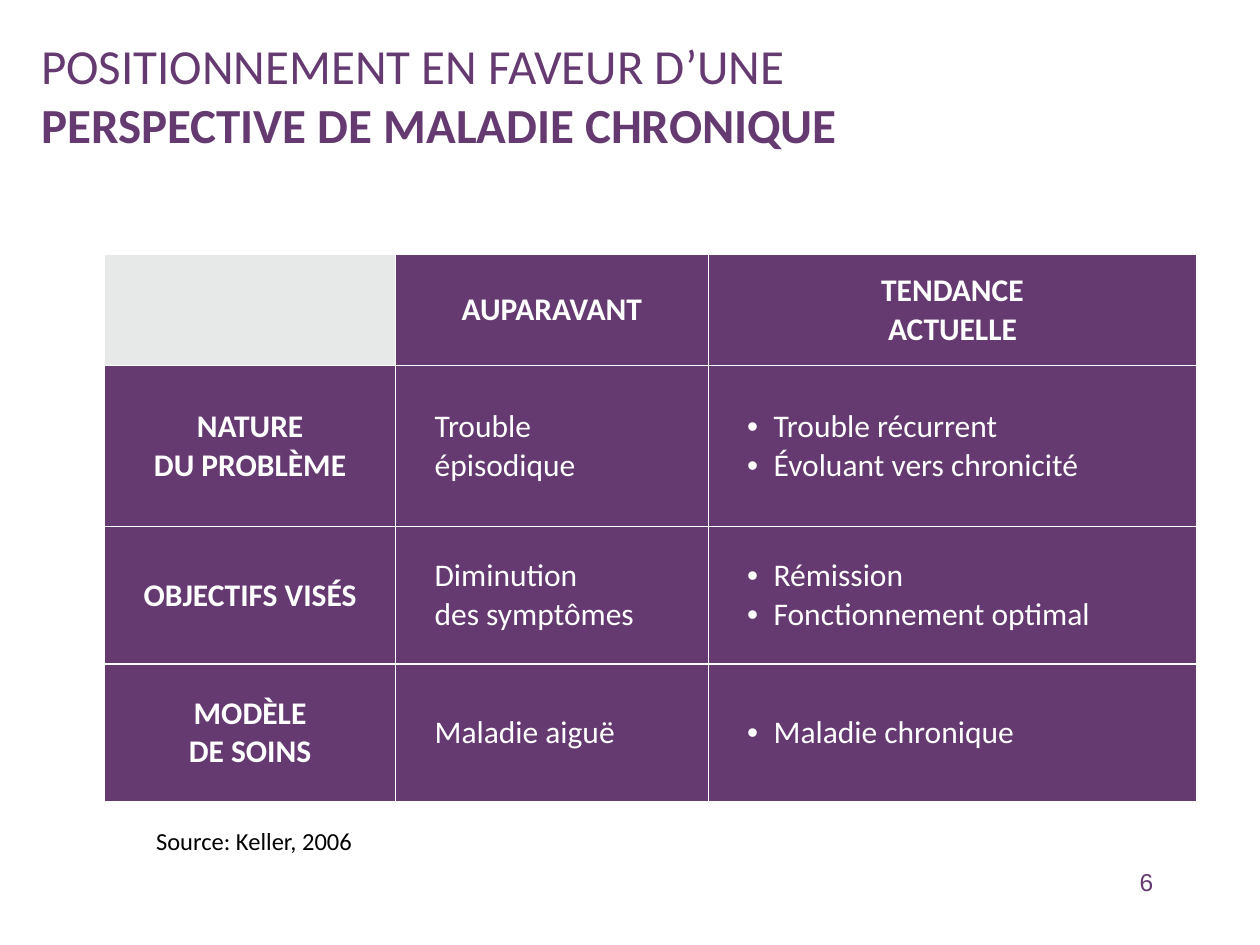
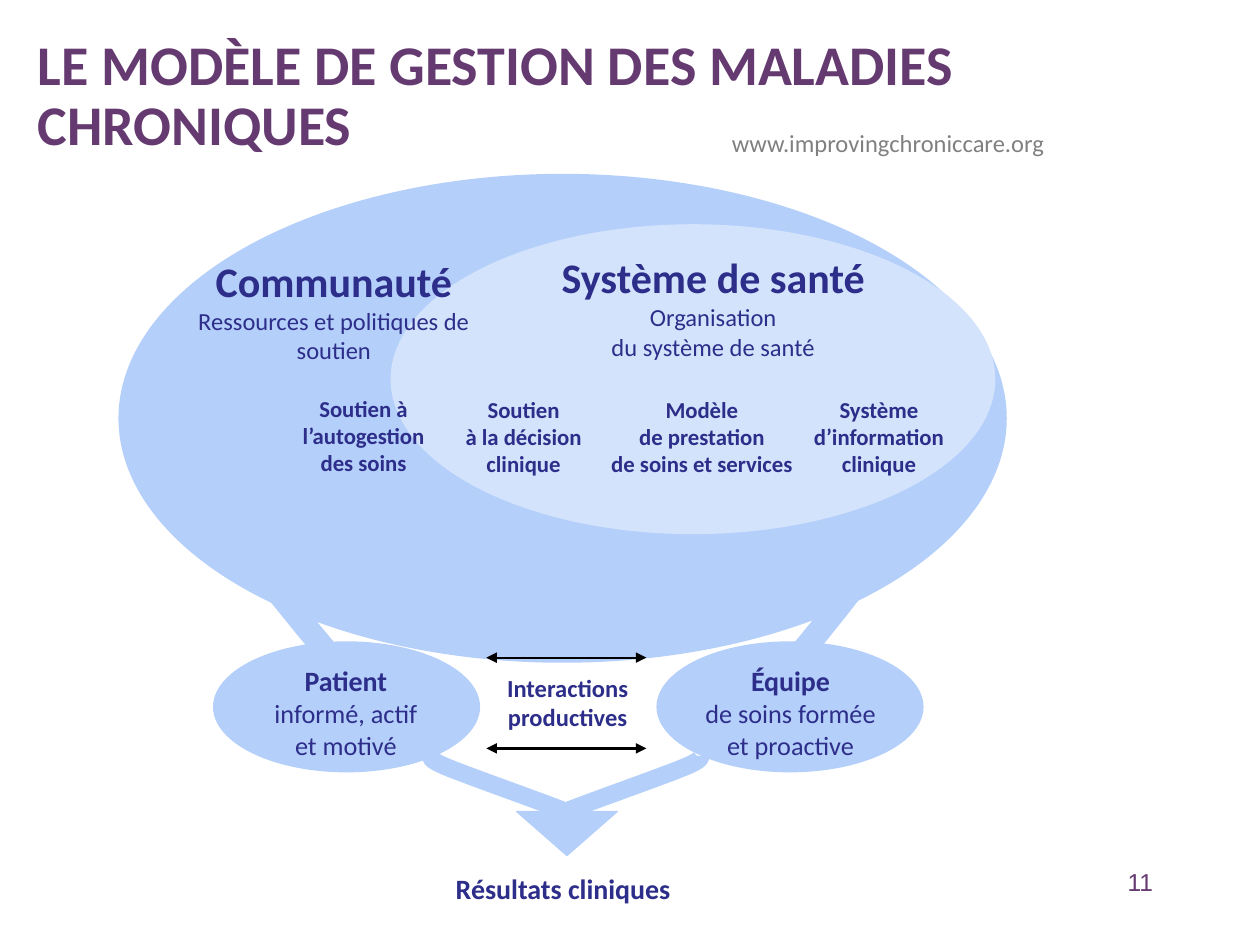
import lxml.etree
import pptx
import pptx.dml.color
import pptx.enum.shapes
import pptx.enum.text
import pptx.oxml.ns
import pptx.util

EMU_PER_PX = 9144  # 100 px to the inch
COLOURS = {
    "purple": "653A71",
    "grey": "E7E8E8",
    "white": "FFFFFF",
    "black": "000000",
    "link": "808080",
    "navy": "2D2D8A",
    "sky": "B4CFFA",
    "pale": "D4E3FC",
}
ALIGN = pptx.enum.text.PP_ALIGN
MIDDLE = pptx.enum.text.MSO_ANCHOR.MIDDLE
SHAPES = pptx.enum.shapes.MSO_SHAPE


def px(length):
    return pptx.util.Emu(round(length * EMU_PER_PX))


def rgb(name):
    return pptx.dml.color.RGBColor.from_string(COLOURS[name])


def add_element(parent, tag, **attributes):
    return lxml.etree.SubElement(parent, pptx.oxml.ns.qn(tag), attributes)


def bezier(points, steps=12):
    """Points along a chain of cubic curves: a start, then three points per curve."""
    curve = [points[0]]
    for first in range(0, len(points) - 1, 3):
        corners = points[first:first + 4]
        for step in range(1, steps + 1):
            t = step / steps
            weights = ((1 - t) ** 3, 3 * t * (1 - t) ** 2, 3 * t * t * (1 - t), t ** 3)
            curve.append(tuple(sum(weight * corner[axis] for weight, corner in zip(weights, corners))
                               for axis in (0, 1)))
    return curve


def mirror(points, x_sum, drop=0):
    """Reflect points about the vertical line x = x_sum / 2, then lower them."""
    return [(x_sum - x, y + drop) for x, y in points]


class Deck:
    def __init__(self):
        self.presentation = pptx.Presentation()
        self.presentation.slide_width = px(1000)
        self.presentation.slide_height = px(750)
        self.slide = None

    def new_slide(self, number):
        self.slide = self.presentation.slides.add_slide(self.presentation.slide_layouts[6])
        self.text((717, 683, 208, 50), [[(number, 14, False)]], "purple", ALIGN.RIGHT, font="Arial")

    def add_runs(self, paragraph, runs, colour, align, font="Calibri"):
        """Fill a paragraph with (text, size, bold) runs; a newline is a line break."""
        paragraph.alignment = align
        for text, size, bold in runs:
            for index, part in enumerate(text.split("\n")):
                if index:
                    paragraph.add_line_break()
                run = paragraph.add_run()
                run.text = part
                run.font.name = font
                run.font.size = pptx.util.Pt(size)
                run.font.bold = bold
                run.font.color.rgb = rgb(colour)

    def text(self, box, paragraphs, colour="navy", align=ALIGN.CENTER, font="Calibri"):
        frame = self.slide.shapes.add_textbox(*map(px, box)).text_frame
        frame.word_wrap = True
        for index, runs in enumerate(paragraphs):
            paragraph = frame.add_paragraph() if index else frame.paragraphs[0]
            self.add_runs(paragraph, runs, colour, align, font)
        return frame

    def title(self, box, runs, line_spacing=1.0):
        frame = self.text(box, [runs], "purple", ALIGN.LEFT)
        frame.vertical_anchor = MIDDLE
        frame.paragraphs[0].line_spacing = line_spacing

    def shape(self, kind, box, fill, line_width=0):
        shape = self.slide.shapes.add_shape(kind, *map(px, box))
        self.paint(shape, fill, line_width)

    def paint(self, shape, fill, line_width, line_colour="sky"):
        shape.shadow.inherit = False
        if fill:
            shape.fill.solid()
            shape.fill.fore_color.rgb = rgb(fill)
        else:
            shape.fill.background()
        if line_width:
            shape.line.color.rgb = rgb(line_colour)
            shape.line.width = pptx.util.Pt(line_width)
        else:
            shape.line.fill.background()

    def curve(self, points, width, fill=None):
        start, *rest = [(px(x), px(y)) for x, y in bezier(points)]
        builder = self.slide.shapes.build_freeform(*start, scale=1.0)
        builder.add_line_segments(rest, close=False)
        self.paint(builder.convert_to_shape(), fill, width)

    def double_arrow(self, left, right, y):
        connector = self.slide.shapes.add_connector(
            pptx.enum.shapes.MSO_CONNECTOR.STRAIGHT, px(left), px(y), px(right), px(y))
        connector.line.color.rgb = rgb("black")
        connector.line.width = pptx.util.Pt(1.25)
        properties = connector._element.spPr
        line = properties.find(pptx.oxml.ns.qn("a:ln"))
        for tag in ("a:headEnd", "a:tailEnd"):
            add_element(line, tag, type="triangle")
        add_element(properties, "a:effectLst")

    def table(self, left, top, widths, heights):
        table = self.slide.shapes.add_table(
            len(heights), len(widths), *map(px, (left, top, sum(widths), sum(heights)))).table
        table.first_row = table.horz_banding = False
        for column, width in zip(table.columns, widths):
            column.width = px(width)
        for row, height in zip(table.rows, heights):
            row.height = px(height)
        return table

    def cell(self, cell, lines, fill, bold, align, indent=0, bullet=False):
        cell.vertical_anchor = MIDDLE
        properties = cell._tc.get_or_add_tcPr()
        for side in "LRTB":
            border = add_element(properties, f"a:ln{side}", w=str(pptx.util.Pt(0.75)))
            solid = add_element(border, "a:solidFill")
            add_element(solid, "a:srgbClr", val=COLOURS["white"])
        cell.fill.solid()
        cell.fill.fore_color.rgb = rgb(fill)
        for index, line in enumerate(lines):
            paragraph = cell.text_frame.add_paragraph() if index else cell.text_frame.paragraphs[0]
            paragraph_properties = paragraph._p.get_or_add_pPr()
            paragraph_properties.set("marL", str(px(indent * (1 + bullet))))
            if bullet:
                paragraph_properties.set("indent", str(px(-indent)))
                add_element(paragraph_properties, "a:buFont", typeface="Arial")
                add_element(paragraph_properties, "a:buChar", char="•")
            self.add_runs(paragraph, [(line, 18, bold)], "white", align)


def perspective_slide(deck):
    deck.new_slide("6")
    deck.title((23, 0, 693, 150), [("POSITIONNEMENT EN FAVEUR D’UNE ", 28, False),
                                   ("PERSPECTIVE DE MALADIE CHRONIQUE", 28, True)])
    rows = [
        ([], ["AUPARAVANT"], ["TENDANCE", "ACTUELLE"]),
        (["NATURE\nDU PROBLÈME"], ["Trouble", "épisodique"],
         ["Trouble récurrent", "Évoluant vers chronicité"]),
        (["OBJECTIFS VISÉS"], ["Diminution\ndes symptômes"],
         ["Rémission", "Fonctionnement optimal"]),
        (["MODÈLE\nDE SOINS"], ["Maladie aiguë"], ["Maladie chronique"]),
    ]
    table = deck.table(83, 202, (231, 248, 388), (88, 128, 109, 109))
    for row_index, row in enumerate(rows):
        for column_index, lines in enumerate(row):
            cell = table.cell(row_index, column_index)
            fill = "purple" if lines else "grey"
            if row_index == 0 or column_index == 0:
                deck.cell(cell, lines, fill, True, ALIGN.CENTER)
            else:
                deck.cell(cell, lines, fill, False, ALIGN.LEFT, 21, column_index == 2)
    deck.text((114, 651, 281, 34), [[("Source: Keller, 2006", 14, False)]], "black", ALIGN.LEFT)


def model_slide(deck):
    deck.new_slide("11")
    deck.shape(SHAPES.OVAL, (94, 138, 705, 388), "sky")
    deck.shape(SHAPES.OVAL, (310, 178, 480, 246), "pale")

    leg = [(259, 517), (238, 492), (217, 466), (203, 447), (189, 428), (179, 408), (174, 400)]
    for points in (leg, mirror(leg, 885, 13)):
        deck.curve(points, 13.5, "sky")
    for left in (169, 521):
        deck.shape(SHAPES.OVAL, (left, 509, 212, 104), "sky")

    headed_texts = [
        ((414, 195, 304, 104), 24, 14, ("Système de santé", "Organisation", "du système de santé")),
        ((138, 198, 254, 104), 24, 14, ("Communauté", "Ressources et politiques de soutien")),
        ((197, 522, 155, 78), 16, 15, ("Patient", "informé, actif", "et motivé")),
        ((536, 522, 183, 78), 16, 15, ("Équipe", "de soins formée", "et proactive")),
    ]
    for box, heading_size, size, (heading, *lines) in headed_texts:
        deck.text(box, [[(heading, heading_size, True)]] + [[(line, size, False)] for line in lines])

    bold_texts = [
        ((225, 308, 127, 91), 13, ("Soutien à l’autogestion", "des soins")),
        ((352, 309, 127, 76), 13, ("Soutien", "à la décision clinique")),
        ((465, 309, 184, 76), 13, ("Modèle", "de prestation", "de soins et services")),
        ((620, 309, 155, 76), 13, ("Système d’information clinique",)),
        ((366, 529, 169, 65), 14, ("Interactions productives",)),
        ((327, 687, 240, 39), 16, ("Résultats cliniques",)),
    ]
    for box, size, lines in bold_texts:
        deck.text(box, [[(line, size, True)] for line in lines])

    for y in (522, 594):
        deck.double_arrow(386, 513, y)
    deck.shape(SHAPES.FLOWCHART_MERGE, (410, 644, 80, 35), "sky", 0.75)
    arm = [(342, 600), (342, 602), (342, 604), (360, 611), (378, 618), (434, 638), (449, 644)]
    for points in (arm, mirror(arm, 898)):
        deck.curve(points, 10)

    deck.title((20, 21, 820, 113), [("LE MODÈLE DE GESTION DES MALADIES CHRONIQUES", 32, True)], 0.9)
    deck.text((571, 97, 307, 34), [[("www.improvingchroniccare.org", 14, False)]], "link", ALIGN.LEFT)


def main():
    deck = Deck()
    perspective_slide(deck)
    model_slide(deck)
    deck.presentation.save("out.pptx")


if __name__ == "__main__":
    main()
